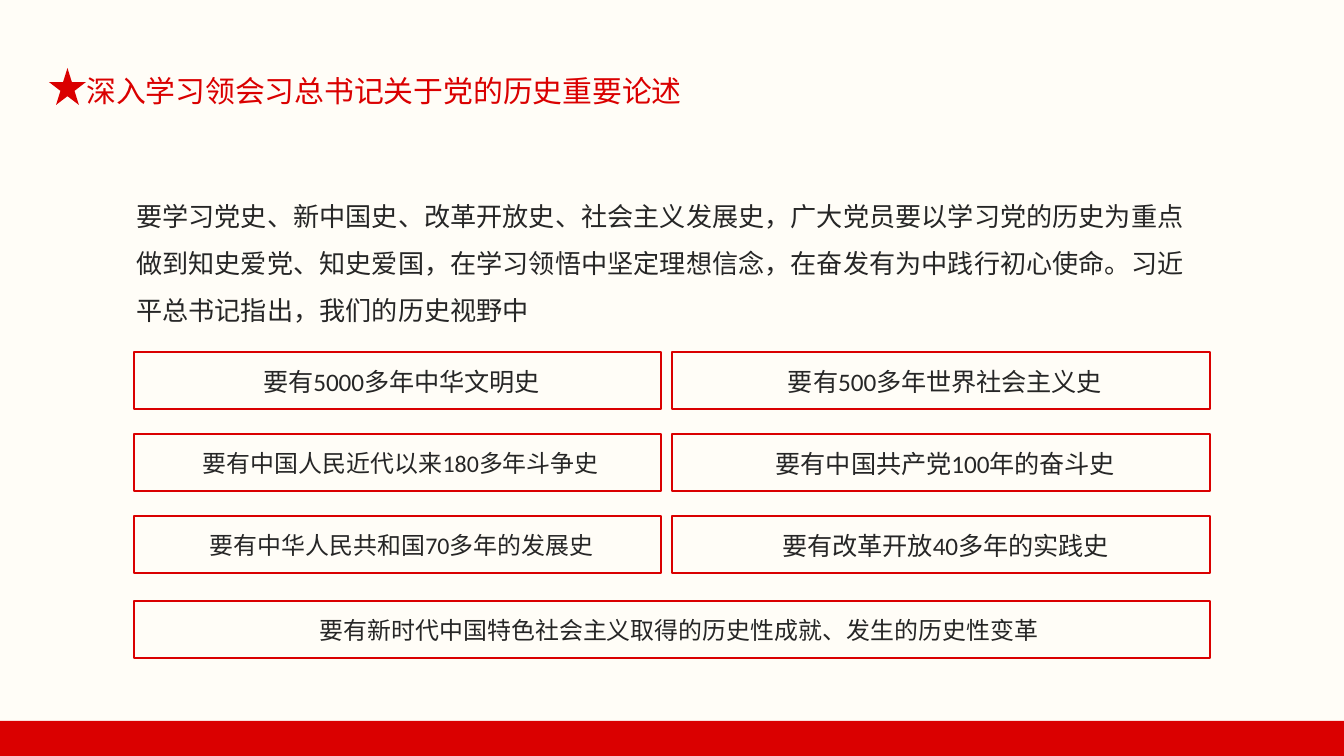
from pptx import Presentation
from pptx import util as u
from pptx.dml.color import RGBColor
from pptx.enum import shapes, text

PX = 914400 / 134.4
RED, INK, PAPER = "DA0000", "262626", "FFFDF7"
ALIGN = text.PP_ALIGN


def px(n):
    return u.Emu(round(n * PX))


def color(value):
    return RGBColor.from_string(value)


class Deck:
    """Holds the presentation style and the current slide."""

    def __init__(self, w, h):
        self.prs = Presentation()
        self.prs.slide_width, self.prs.slide_height = px(w), px(h)
        self.s = self.prs.slides.add_slide(self.prs.slide_layouts[5])
        fill = self.s.background.fill
        fill.solid()
        fill.fore_color.rgb = color(PAPER)

    def set_text(self, sp, words, size, c=INK, font="Calibri", align=ALIGN.LEFT, wrap=False):
        tf = sp.text_frame
        tf.text = words
        tf.auto_size = text.MSO_AUTO_SIZE.NONE
        tf.word_wrap = wrap
        tf.vertical_anchor = text.MSO_ANCHOR.TOP
        p = tf.paragraphs[0]
        p.alignment = align
        f = p.runs[0].font
        f.size, f.name, f.color.rgb = u.Pt(size), font, color(c)
        return p

    def title(self, x, y, w, h, words):
        sp = self.s.shapes.title
        sp.left, sp.top, sp.width, sp.height = map(px, (x, y, w, h))
        self.set_text(sp, words, 16, RED)

    def textbox(self, x, y, w, h, words, size, **style):
        sp = self.s.shapes.add_textbox(*map(px, (x, y, w, h)))
        return self.set_text(sp, words, size, **style)

    def shape(self, kind, x, y, w, h, filled=True):
        sp = self.s.shapes.add_shape(kind, *map(px, (x, y, w, h)))
        sp.shadow.inherit = False
        if filled:
            sp.fill.solid()
            sp.fill.fore_color.rgb = color(RED)
            sp.line.fill.background()
        else:
            sp.fill.background()
            sp.line.color.rgb = color(RED)
            sp.line.width = u.Pt(1)
        return sp

    def card(self, x, y, w, center, label_w, words, size):
        sp = self.shape(shapes.MSO_SHAPE.ROUNDED_RECTANGLE, x, y, w, 57, filled=False)
        sp.adjustments[0] = 0
        self.textbox(center - label_w // 2, y + 8, label_w, 44, words, size, align=ALIGN.CENTER)


def main():
    deck = Deck(1344, 756)
    deck.title(73, 66, 630, 50, "深入学习领会习总书记关于党的历史重要论述")
    deck.shape(shapes.MSO_SHAPE.STAR_5_POINT, 49, 68, 37, 37)
    deck.shape(shapes.MSO_SHAPE.RECTANGLE, 0, 721, 1344, 35)

    columns = [(134, 527, 401), (672, 538, 945)]
    rows = [
        [("要有5000多年中华文明史", 371, 13.5), ("要有500多年世界社会主义史", 426, 13.5)],
        [("要有中国人民近代以来180多年斗争史", 512, 12.8), ("要有中国共产党100年的奋斗史", 457, 13.5)],
        [("要有中华人民共和国70多年的发展史", 497, 12.8), ("要有改革开放40多年的实践史", 441, 13.5)],
    ]
    for i, row in enumerate(rows):
        for (x, w, center), (words, label_w, size) in zip(columns, row):
            deck.card(x, 352 + 82 * i, w, center, label_w, words, size)
    deck.card(134, 601, 1076, 679, 888, "要有新时代中国特色社会主义取得的历史性成就、发生的历史性变革", 12.8)

    p = deck.textbox(
        123, 178, 1089, 156,
        "要学习党史、新中国史、改革开放史、社会主义发展史，广大党员要以学习党的历史为重点"
        "做到知史爱党、知史爱国，在学习领悟中坚定理想信念，在奋发有为中践行初心使命。"
        "习近平总书记指出，我们的历史视野中",
        14, font="Noto Sans CJK SC", wrap=True)
    p.line_spacing = 1.5
    deck.prs.save("out.pptx")


if __name__ == "__main__":
    main()
